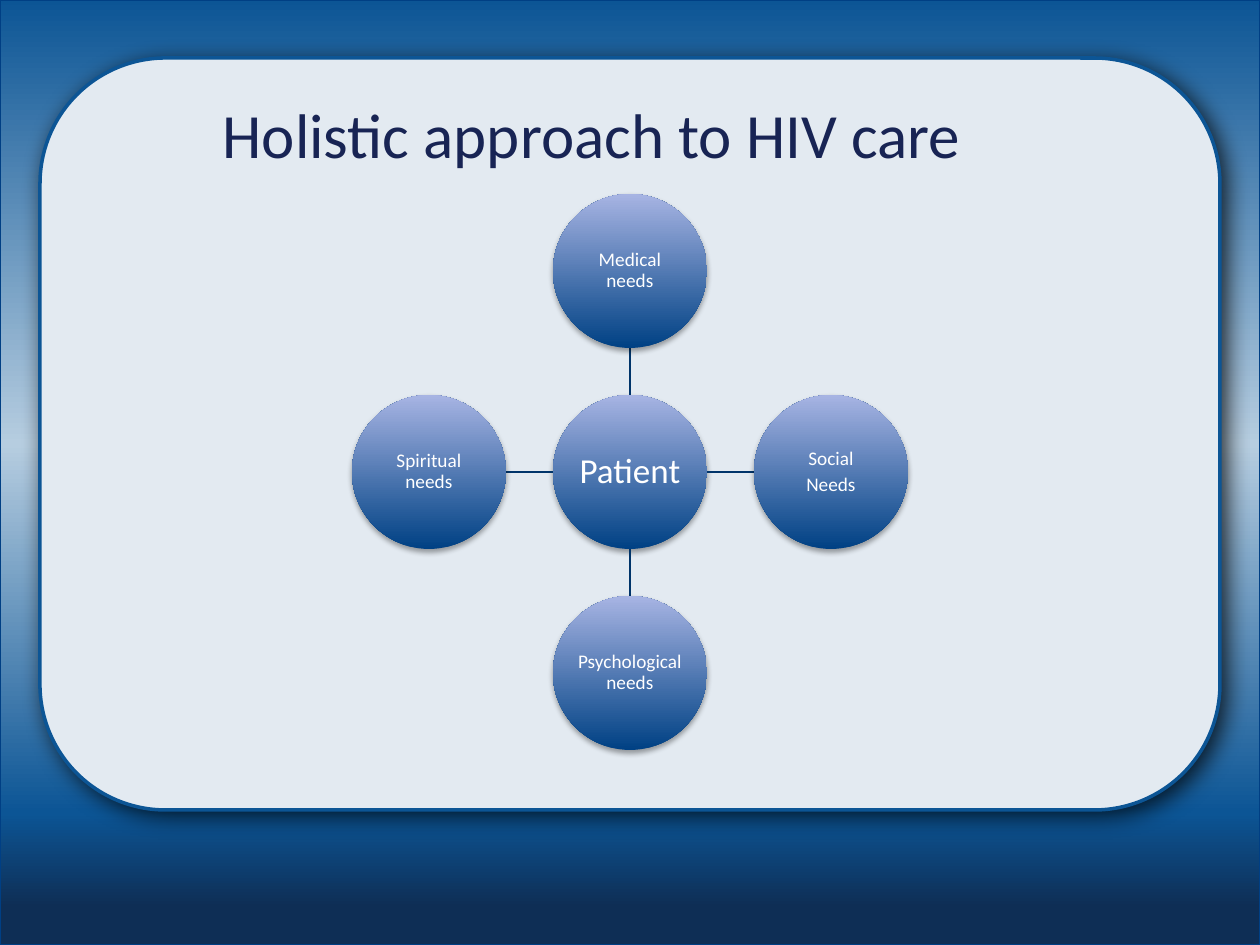
from lxml.etree import SubElement as Sub
from pptx import Presentation
from pptx.dml.color import RGBColor
from pptx.enum.shapes import MSO_CONNECTOR as Conn, MSO_SHAPE as Kind
from pptx.enum.text import MSO_ANCHOR as Anchor, MSO_AUTO_SIZE as Fit, PP_ALIGN as Align
from pptx.oxml.ns import qn
from pptx.util import Inches, Pt

SCALE = Inches(10) / 1260
WIDE, HIGH = 1260, 945
MID = (630, 472)
STEP, SIZE = 201, 154
SOFT = (35, 3.1, 1.8, 90)
DEEP = (75, 13, 4, 45)
SKY = [(0, "0C5595"), (47, "B6CDE0"), (86, "0C5595"), (96, "0E2E55"), (100, "0E2E55")]
BALL = [(0, "004184"), (100, "A7B4E3")]
NEEDS = [
    ("Medical needs", 0, -1),
    ("Social\nNeeds", 1, 0),
    ("Psychological needs", 0, 1),
    ("Spiritual needs", -1, 0),
]


def px(*nums):
    return [round(n * SCALE) for n in nums]


def rgb(code):
    return RGBColor.from_string(code)


class Deck:
    """Style and current slide, with one method for each kind of element."""

    font = "Calibri"
    ink, pale = "182454", "FFFFFF"
    edge, link = "0C5595", "00346A"

    def __init__(self):
        self.prs = Presentation()
        self.prs.slide_width, self.prs.slide_height = px(WIDE, HIGH)
        self.slide = self.prs.slides.add_slide(self.prs.slide_layouts[5])

    def label(self, frame, text, size, color, align):
        frame.text = text
        frame.word_wrap = True
        for para in frame.paragraphs:
            para.alignment = align
            for run in para.runs:
                run.font.name = self.font
                run.font.size = Pt(size)
                run.font.color.rgb = rgb(color)

    def title(self, text, *box):
        item = self.slide.shapes.title
        item.left, item.top, item.width, item.height = px(*box)
        frame = item.text_frame
        self.label(frame, text, 36, self.ink, Align.LEFT)
        frame.auto_size = Fit.NONE
        frame.vertical_anchor = Anchor.TOP
        item.element.getparent().append(item.element)

    def shape(self, kind, box, shade, line=None, width=0):
        item = self.slide.shapes.add_shape(kind, *px(*box))
        if line:
            item.line.color.rgb = rgb(line)
            item.line.width = Pt(width)
        else:
            item.line.fill.background()
        item.shadow.inherit = False
        alpha, blur, dist, angle = shade
        glow = Sub(item.element.spPr.find(qn("a:effectLst")), qn("a:outerShdw"),
                   blurRad=str(Pt(blur)), dist=str(Pt(dist)),
                   dir=str(angle * 60000), rotWithShape="0")
        tint = Sub(glow, qn("a:srgbClr"), val="000000")
        Sub(tint, qn("a:alpha"), val=str(alpha * 1000))
        return item

    def blend(self, item, stops, angle):
        item.fill.gradient()
        item.fill.gradient_angle = angle
        group = item.element.spPr.find(qn("a:gradFill")).find(qn("a:gsLst"))
        for old in list(group):
            group.remove(old)
        for spot, color in stops:
            stop = Sub(group, qn("a:gs"), pos=str(spot * 1000))
            Sub(stop, qn("a:srgbClr"), val=color)

    def back(self):
        item = self.shape(Kind.RECTANGLE, (0, 0, WIDE, HIGH), SOFT, "003F84", 0.75)
        self.blend(item, SKY, 270)

    def panel(self, *box):
        item = self.shape(Kind.ROUNDED_RECTANGLE, box, DEEP, self.edge, 2)
        item.adjustments[0] = 0.167
        item.fill.solid()
        item.fill.fore_color.rgb = rgb("E3EAF1")

    def ball(self, text, x, y, size):
        half = SIZE // 2
        item = self.shape(Kind.OVAL, (x - half, y - half, SIZE, SIZE), SOFT)
        self.blend(item, BALL, 90)
        frame = item.text_frame
        (frame.margin_left, frame.margin_top,
         frame.margin_right, frame.margin_bottom) = px(1, 1, 1, 1)
        frame.vertical_anchor = Anchor.MIDDLE
        self.label(frame, text, size, self.pale, Align.CENTER)
        for para in frame.paragraphs:
            para.line_spacing = 0.9
        for para in frame.paragraphs[:-1]:
            para.space_after = Pt(3)

    def spoke(self, *ends):
        item = self.slide.shapes.add_connector(Conn.STRAIGHT, *px(*ends))
        item.line.color.rgb = rgb(self.link)
        item.line.width = Pt(0.75)
        Sub(item.element.spPr, qn("a:effectLst"))


def main():
    deck = Deck()
    deck.back()
    deck.panel(40, 58, 1180, 752)
    x, y = MID
    near, far = SIZE // 2, STEP - SIZE // 2
    deck.ball("Patient", x, y, 20)
    for text, dx, dy in NEEDS:
        deck.spoke(x + dx * near, y + dy * near, x + dx * far, y + dy * far)
        deck.ball(text, x + dx * STEP, y + dy * STEP, 11)
    deck.title("Holistic approach to HIV care", 210, 89, 808, 89)
    deck.prs.save("out.pptx")


if __name__ == "__main__":
    main()
